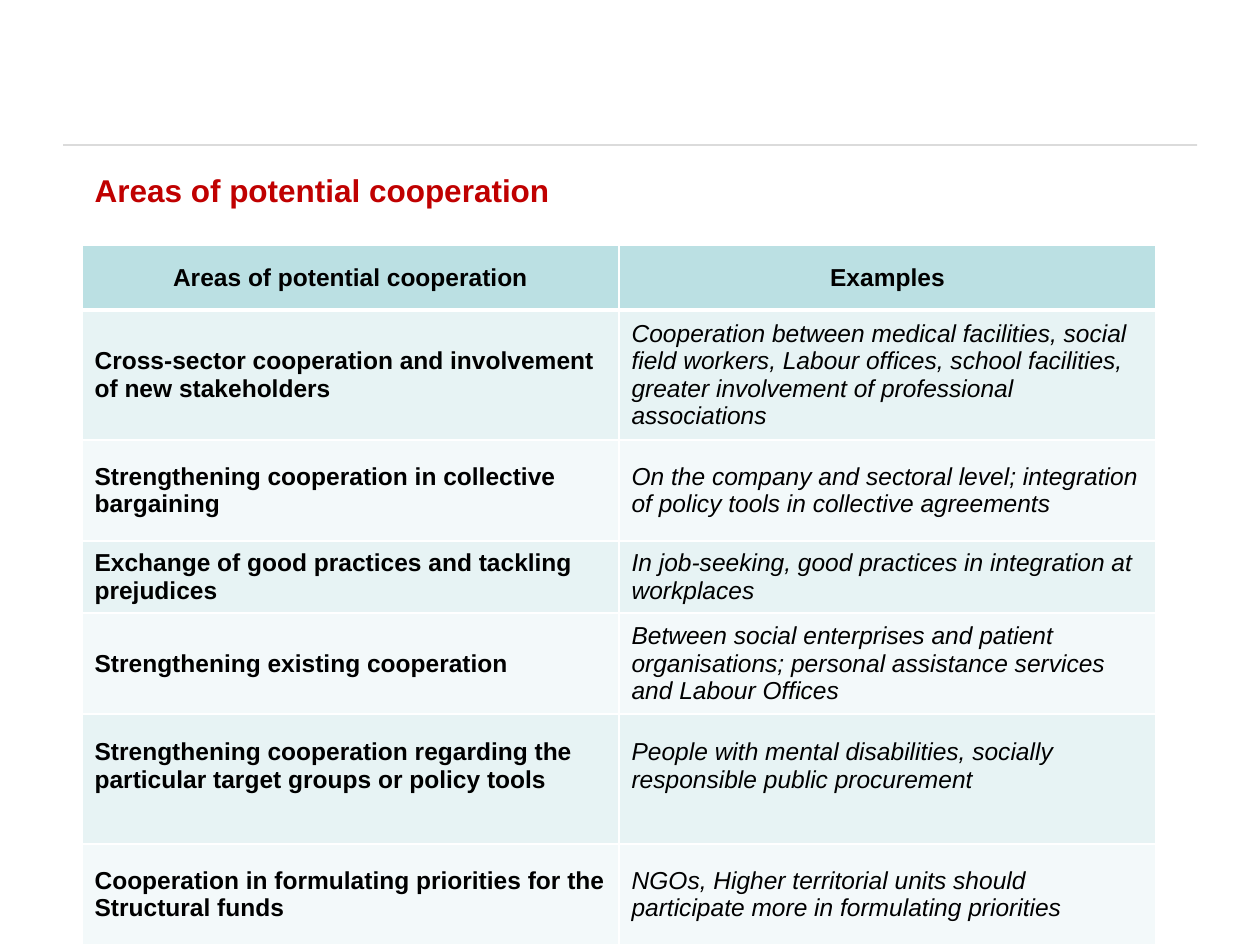
from lxml import etree
from pptx import Presentation
from pptx.dml.color import RGBColor as RGB
from pptx.enum.shapes import MSO_CONNECTOR as Conn
from pptx.enum.text import MSO_ANCHOR as Anchor, MSO_AUTO_SIZE as Fit, PP_ALIGN as Align
from pptx.oxml.ns import qn
from pptx.util import Emu, Pt

BLACK = RGB(0x00, 0x00, 0x00)
WHITE = RGB(0xFF, 0xFF, 0xFF)
RED = RGB(0xC0, 0x00, 0x00)
TEAL = RGB(0xBB, 0xE0, 0xE3)
BANDS = RGB(0xE7, 0xF3, 0xF4), RGB(0xF3, 0xF9, 0xFA)

HEADS = "Areas of potential cooperation", "Examples"
# Height in px, area, examples, bottom margin in px
ROWS = [
    (130, "Cross-sector cooperation and involvement of new stakeholders",
     "Cooperation between medical facilities, social field workers, Labour offices, "
     "school facilities, greater involvement of professional associations", 6),
    (101, "Strengthening cooperation in collective bargaining",
     "On the company and sectoral level; integration of policy tools in collective agreements", 6),
    (72, "Exchange of good practices and tackling prejudices",
     "In job-seeking, good practices in integration at workplaces", 6),
    (101, "Strengthening existing cooperation",
     "Between social enterprises and patient organisations; personal assistance services "
     "and Labour Offices", 6),
    (130, "Strengthening cooperation regarding the particular target groups or policy tools",
     "People with mental disabilities, socially responsible public procurement", 32),
    (101, "Cooperation in formulating priorities for the Structural funds",
     "NGOs, Higher territorial units should participate more in formulating priorities", 6),
]


def px(num):
    return Emu(round(num * 914400 / 126))


class Deck:
    face = "Arial"

    def __init__(self, wide, high):
        self.prs = Presentation()
        self.prs.slide_width, self.prs.slide_height = px(wide), px(high)
        self.slide = self.prs.slides.add_slide(self.prs.slide_layouts[5])

    def style(self, para, size, color, bold=False, slant=False, align=Align.LEFT):
        para.alignment = align
        font = para.font
        font.name, font.size = self.face, Pt(size)
        font.bold, font.italic = bold, slant
        font.color.rgb = color

    def title(self, text, x, y, w, h):
        box = self.slide.shapes.title
        box.left, box.top, box.width, box.height = map(px, (x, y, w, h))
        frame = box.text_frame
        frame.text = text
        frame.word_wrap = True
        frame.auto_size = Fit.NONE
        frame.vertical_anchor = Anchor.TOP
        self.style(frame.paragraphs[0], 18, RED, bold=True)

    def rule(self, x, y, end, alpha):
        line = self.slide.shapes.add_connector(Conn.STRAIGHT, px(x), px(y), px(end), px(y))
        line.line.color.rgb = BLACK
        line.line.width = Pt(0.5)
        props = line._element.spPr
        tint = props.find(".//" + qn("a:srgbClr"))
        etree.SubElement(tint, qn("a:alpha"), val=str(alpha * 1000))
        etree.SubElement(props, qn("a:effectLst"))

    def edge(self, cell, side, width):
        props = cell._tc.get_or_add_tcPr()
        line = etree.SubElement(props, qn("a:ln" + side), w=str(Pt(width)))
        fill = etree.SubElement(line, qn("a:solidFill"))
        etree.SubElement(fill, qn("a:srgbClr"), val=str(WHITE))

    def cell(self, cell, text, fill, top=1, base=1, pad=6, **look):
        for side, width in zip("LRTB", (1, 1, top, base)):
            self.edge(cell, side, width)
        cell.fill.solid()
        cell.fill.fore_color.rgb = fill
        cell.vertical_anchor = Anchor.MIDDLE
        cell.margin_bottom = px(pad)
        cell.text = text
        self.style(cell.text_frame.paragraphs[0], 14, BLACK, **look)

    def table(self, x, y, wide, head, heads, rows):
        highs = [head] + [row[0] for row in rows]
        grid = self.slide.shapes.add_table(
            len(highs), len(heads), px(x), px(y), px(wide), px(sum(highs))).table
        for col in grid.columns:
            col.width = px(wide // len(heads))
        for row, high in zip(grid.rows, highs):
            row.height = px(high)
        for col, text in enumerate(heads):
            self.cell(grid.cell(0, col), text, TEAL, base=3, bold=True, align=Align.CENTER)
        for num, (_, area, case, pad) in enumerate(rows, 1):
            look = dict(fill=BANDS[(num - 1) % 2], top=3 if num == 1 else 1, pad=pad)
            self.cell(grid.cell(num, 0), area, bold=True, **look)
            self.cell(grid.cell(num, 1), case, slant=True, **look)


def main():
    deck = Deck(1260, 945)
    # Header rule and title
    deck.rule(63, 145, 1197, alpha=40)
    deck.title(HEADS[0], 82, 165, 955, 50)
    # Cooperation table
    deck.table(82, 245, 1074, 65, HEADS, ROWS)
    deck.prs.save("out.pptx")


if __name__ == "__main__":
    main()
